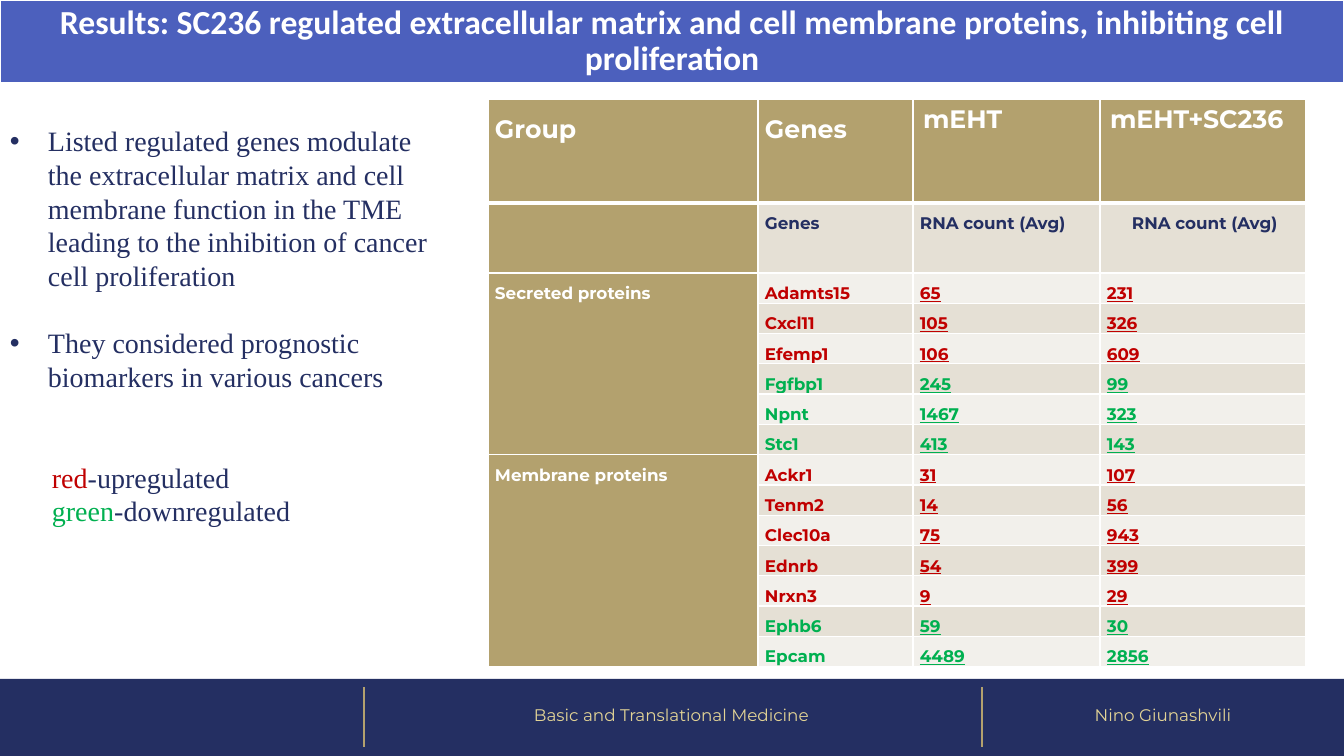
from lxml import etree
from pptx import Presentation
from pptx import util as u
from pptx.dml.color import RGBColor
from pptx.enum import shapes, text
from pptx.oxml import ns

PX = 12192000 / 1344
WHITE = RGBColor(0xFF, 0xFF, 0xFF)
NAVY = RGBColor(0x24, 0x2F, 0x62)
BLUE = RGBColor(0x4C, 0x60, 0xBD)
GOLD = RGBColor(0xB3, 0xA1, 0x6E)
PALE_GOLD = RGBColor(0xE3, 0xD4, 0x96)
SAND = RGBColor(0xE5, 0xE0, 0xD5)
IVORY = RGBColor(0xF2, 0xF0, 0xEB)
RED = RGBColor(0xC0, 0x00, 0x00)
GREEN = RGBColor(0x00, 0xB0, 0x50)
CENTER, JUSTIFY = text.PP_ALIGN.CENTER, text.PP_ALIGN.JUSTIFY


def px(*lengths):
    return [u.Emu(round(length * PX)) for length in lengths]


def write(paragraph, words, color, font, layout):
    for key, value in layout.items():
        setattr(paragraph, key, value)
    run = paragraph.add_run()
    run.text = words
    run.font.color.rgb = color
    for key, value in font.items():
        setattr(run.font, key, value)


deck = Presentation()
deck.slide_width, deck.slide_height = px(1344, 756)
slide = deck.slides.add_slide(deck.slide_layouts[6])

footer_bar = slide.shapes.add_shape(shapes.MSO_SHAPE.RECTANGLE, *px(0, 679, 1344, 80))
footer_bar.shadow.inherit = False
footer_bar.fill.solid()
footer_bar.fill.fore_color.rgb = NAVY
footer_bar.line.fill.background()

for x in (364, 982):
    divider = slide.shapes.add_connector(shapes.MSO_CONNECTOR.STRAIGHT, *px(x, 687, x, 747))
    divider.line.color.rgb = GOLD
    divider.line.width = u.Pt(1.5)
    etree.SubElement(divider._element.spPr, ns.qn("a:effectLst"))

footer_font = {"name": "Montserrat", "size": u.Pt(12)}
for left, width, words in ((362, 619, "Basic and Translational Medicine"),
                           (982, 362, "Nino Giunashvili")):
    frame = slide.shapes.add_textbox(*px(left, 676, width, 80)).text_frame
    frame.word_wrap = True
    frame.vertical_anchor = text.MSO_ANCHOR.MIDDLE
    write(frame.paragraphs[0], words, PALE_GOLD, footer_font,
          {"alignment": CENTER, "line_spacing": 0.9})

genes = [
    ("Adamts15", 65, 231), ("Cxcl11", 105, 326), ("Efemp1", 106, 609),
    ("Fgfbp1", 245, 99), ("Npnt", 1467, 323), ("Stc1", 413, 143),
    ("Ackr1", 31, 107), ("Tenm2", 14, 56), ("Clec10a", 75, 943),
    ("Ednrb", 54, 399), ("Nrxn3", 9, 29), ("Ephb6", 59, 30), ("Epcam", 4489, 2856),
]
groups = {2: ("Secreted proteins", 7), 8: ("Membrane proteins", 14)}
rows = [("Group", "Genes", "mEHT", "mEHT+SC236"),
        ("", "Genes", "RNA count (Avg)", "RNA count (Avg)")]
rows += [(groups.get(r, ("",))[0], *gene) for r, gene in enumerate(genes, 2)]

table = slide.shapes.add_table(len(rows), 4, *px(488, 99, 818, 564)).table
for column, width in zip(table.columns, px(270, 155, 187, 206)):
    column.width = width
for row, height in zip(table.rows, px(104, 70, *[30] * len(genes))):
    row.height = height

for r, values in enumerate(rows):
    for c, value in enumerate(values):
        cell = table.cell(r, c)
        cell.fill.solid()
        cell.fill.fore_color.rgb = GOLD if r == 0 or c == 0 else SAND if r % 2 else IVORY
        for i, side in enumerate(("lnL", "lnR", "lnT", "lnB")):
            thick = (r == 0 and side == "lnB") or (r == 1 and side == "lnT")
            border = etree.Element(ns.qn(f"a:{side}"), w=str(u.Pt(3 if thick else 1)))
            paint = etree.SubElement(border, ns.qn("a:solidFill"))
            etree.SubElement(paint, ns.qn("a:srgbClr"), val=str(WHITE))
            cell._tc.get_or_add_tcPr().insert(i, border)
        if value == "":
            continue
        layout = {}
        if r > 0 or c < 2:
            cell.margin_left, cell.margin_right, cell.margin_top, cell.margin_bottom = px(7, 7, 0, 0)
            layout = {"alignment": JUSTIFY, "line_spacing": 1.5, "space_after": u.Pt(8)}
        if r == 0 or c == 0:
            color = WHITE
        elif r == 1:
            color = NAVY
        else:
            color = RED if values[3] > values[2] else GREEN
        paragraph = cell.text_frame.paragraphs[0]
        if (r, c) == (1, 3):
            paragraph._p.get_or_add_pPr().set("marL", str(px(25)[0]))
        write(paragraph, str(value), color,
              {"name": "Montserrat", "size": u.Pt(12 if r else 18), "bold": True,
               "underline": r > 1 and c > 1}, layout)
for first, (_, last) in groups.items():
    table.cell(first, 0).merge(table.cell(last, 0))

title_bar = slide.shapes.add_shape(shapes.MSO_SHAPE.RECTANGLE, *px(0, 0, 1344, 83))
title_bar.shadow.inherit = False
title_bar.fill.solid()
title_bar.fill.fore_color.rgb = BLUE
title_bar.line.color.rgb = WHITE
title_bar.line.width = u.Pt(1.5)
title_bar.text_frame.vertical_anchor = text.MSO_ANCHOR.MIDDLE
write(title_bar.text_frame.paragraphs[0],
      "Results: SC236 regulated extracellular matrix and cell membrane proteins, "
      "inhibiting cell proliferation",
      WHITE, {"name": "Calibri", "size": u.Pt(24), "bold": True},
      {"alignment": CENTER, "line_spacing": 0.9})

findings = slide.shapes.add_textbox(*px(0, 119, 458, 417)).text_frame
findings.word_wrap = True
statements = [
    (38, 0, [("Listed regulated genes modulate the extracellular matrix and cell membrane "
              "function in the TME leading to the inhibition of cancer cell proliferation", NAVY)]),
    (38, 24, [("They considered prognostic biomarkers in various cancers", NAVY)]),
    (42, 48, [("red", RED), ("-upregulated", NAVY)]),
    (42, 0, [("green", GREEN), ("-downregulated", NAVY)]),
]
for i, (indent, gap, runs) in enumerate(statements):
    paragraph = findings.add_paragraph() if i else findings.paragraphs[0]
    properties = paragraph._p.get_or_add_pPr()
    properties.set("marL", str(px(indent)[0]))
    if len(runs) == 1:
        properties.set("indent", str(px(-indent)[0]))
        etree.SubElement(properties, ns.qn("a:buFont"), typeface="Arial")
        etree.SubElement(properties, ns.qn("a:buChar"), char="•")
    layout = {"space_before": u.Pt(gap)} if gap else {}
    for words, color in runs:
        write(paragraph, words, color, {"name": "Times New Roman", "size": u.Pt(20)}, layout)

deck.save("out.pptx")
